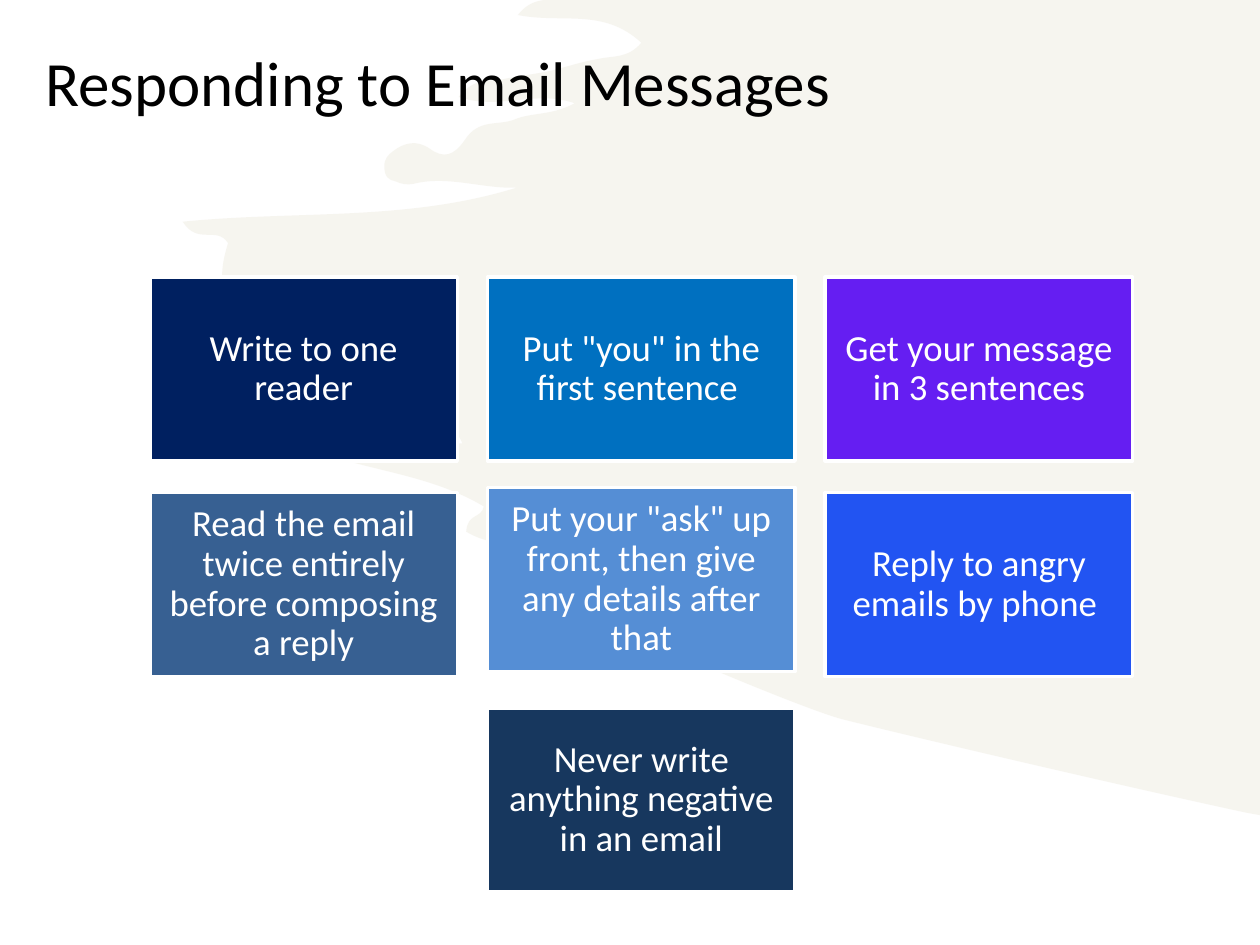
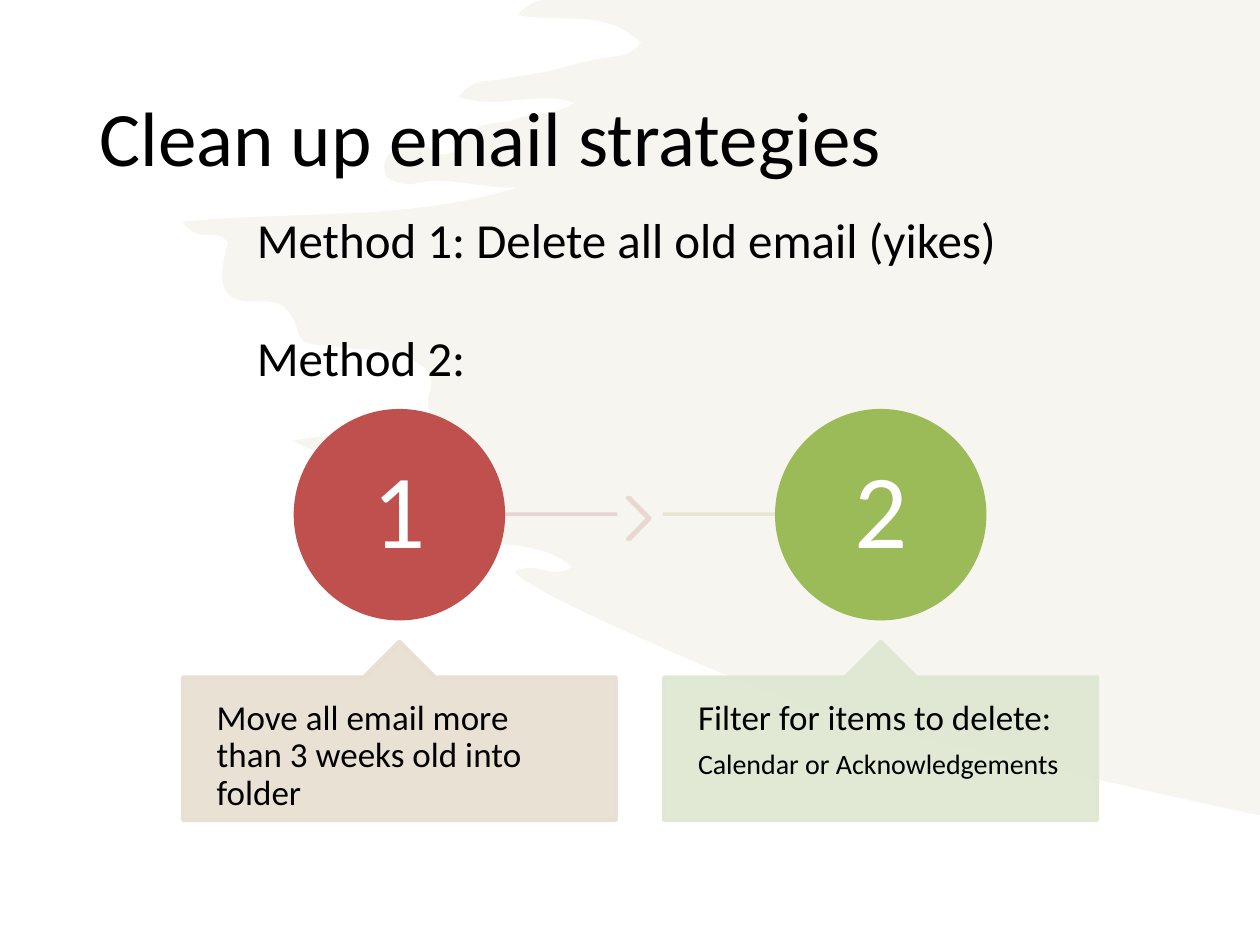
"""Build two slides on answering and cleaning up email."""
import dataclasses

import lxml.etree
import pptx
import pptx.dml.color
import pptx.enum.shapes
import pptx.enum.text
import pptx.oxml.ns
import pptx.util

Inches, Pt = pptx.util.Inches, pptx.util.Pt
RGB = pptx.dml.color.RGBColor.from_string
qn = pptx.oxml.ns.qn
SHAPE = pptx.enum.shapes.MSO_SHAPE
MIDDLE = pptx.enum.text.MSO_ANCHOR.MIDDLE
TOP = pptx.enum.text.MSO_ANCHOR.TOP
LEFT = pptx.enum.text.PP_ALIGN.LEFT
CENTER = pptx.enum.text.PP_ALIGN.CENTER


@dataclasses.dataclass(frozen=True)
class Theme:
    font: str = "Calibri"
    text: str = "000000"
    light: str = "FFFFFF"
    wash: str = "EEECE1"
    link: str = "E8D0D0"
    chevron: str = "E8D7D0"
    link_end: str = "E8E4D1"
    cards: tuple = ("002060", "0070C0", "651EF2", "376092", "558ED5", "2254F2", "17375E")
    circles: tuple = ("C0504D", "9BBB59")
    callouts: tuple = ("E8DED1", "DEE7D1")
    title_sizes: tuple = (36, 44)
    card_size: int = 21
    number_size: int = 60
    method_size: int = 28
    step_size: int = 20
    detail_size: int = 16
    line_width: int = 2


theme = Theme()


def paint(s, line, fill=None, alpha=100):
    """Colour a shape or connector, with opacity in percent."""
    if fill:
        s.shadow.inherit = False
        s.fill.solid()
        s.fill.fore_color.rgb = RGB(fill)
    else:
        lxml.etree.SubElement(s.element.spPr, qn("a:effectLst"))
    if line:
        s.line.color.rgb = RGB(line)
        s.line.width = Pt(theme.line_width)
    else:
        s.line.fill.background()
    if alpha < 100:
        for clr in s.element.spPr.iter(qn("a:srgbClr")):
            lxml.etree.SubElement(clr, qn("a:alpha"), val=str(alpha * 1000))


def write(s, paras, color, anchor=MIDDLE, align=LEFT, margins=(0.1, 0.05, 0.1, 0.05),
          spacing=0.9, gap=0):
    """Fill a text frame with (text, size) paragraphs."""
    tf = s.text_frame
    frame = dict(zip(("margin_left", "margin_top", "margin_right", "margin_bottom"),
                     map(Inches, margins)))
    for name, value in {**frame, "word_wrap": True, "vertical_anchor": anchor}.items():
        setattr(tf, name, value)
    for i, (text, size) in enumerate(paras):
        p = tf.add_paragraph() if i else tf.paragraphs[0]
        before = Pt(gap if i else 0)
        for name, value in {"alignment": align, "line_spacing": spacing,
                            "space_before": before}.items():
            setattr(p, name, value)
        r = p.add_run()
        r.text = text
        for name, value in {"name": theme.font, "size": Pt(size)}.items():
            setattr(r.font, name, value)
        r.font.color.rgb = RGB(color)


wash_curves = [
    (4.25, 0.01, 4.18, 0.03, 4.11, 0.12), (4.46, 0.19, 4.79, 0.06, 5.09, 0.34),
    (4.98, 0.47, 4.86, 0.44, 4.74, 0.47), (4.62, 0.49, 4.5, 0.53, 4.38, 0.56),
    (4.25, 0.59, 4.12, 0.6, 3.99, 0.63), (3.88, 0.65, 3.77, 0.61, 3.64, 0.77),
    (3.96, 0.88, 4.25, 0.71, 4.56, 0.82), (4.38, 0.92, 4.22, 0.89, 4.08, 0.95),
    (3.95, 1, 3.8, 0.94, 3.69, 1.11), (3.6, 1.24, 3.52, 1.26, 3.41, 1.18),
    (3.31, 1.11, 3.21, 1.13, 3.12, 1.2), (3.08, 1.23, 3.05, 1.26, 3.05, 1.32),
    (3.05, 1.41, 3.09, 1.43, 3.14, 1.44), (3.18, 1.46, 3.23, 1.47, 3.28, 1.46),
    (3.55, 1.39, 3.83, 1.5, 4.1, 1.49), (3.23, 1.76, 2.35, 1.67, 1.45, 1.76),
    (1.57, 1.95, 1.72, 1.79, 1.81, 1.93), (1.72, 2.22, 1.76, 2.37, 1.93, 2.39),
    (2.1, 2.41, 2.28, 2.31, 2.37, 2.65), (2.4, 2.76, 2.56, 2.73, 2.66, 2.75),
    (2.88, 2.79, 3.11, 2.75, 3.31, 2.88), (3.4, 2.93, 3.45, 2.97, 3.41, 3.11),
    (3.37, 3.25, 3.42, 3.3, 3.49, 3.36), (3.54, 3.4, 3.62, 3.39, 3.67, 3.52),
    (3.21, 3.5, 2.77, 3.4, 2.32, 3.5), (2.81, 3.74, 3.35, 3.73, 3.84, 4.02),
    (3.82, 4.12, 3.71, 4.07, 3.7, 4.22), (3.96, 4.38, 4.27, 4.27, 4.54, 4.5),
    (4.38, 4.61, 4.24, 4.44, 4.09, 4.54), (4.14, 4.69, 6.3, 5.61, 6.69, 5.71),
    (7.33, 5.87, 8.96, 6.25, 9.89, 6.45),
]
wash_points = [(4.32, 0)]
for curve in wash_curves:
    wash_points += zip(curve[::2], curve[1::2])
wash_points.append((10, 6.47))

prs = pptx.Presentation()
prs.slide_width, prs.slide_height = Inches(10), Inches(7.5)

titles = [
    ("Responding to Email Messages", (0.26, 0.27, 9.49, 0.83)),
    ("Clean up email strategies", (0.69, 0.4, 8.62, 1.45)),
]
for (title, box), size in zip(titles, theme.title_sizes):
    slide = prs.slides.add_slide(prs.slide_layouts[6])
    outline = slide.shapes.build_freeform(Inches(10), 0)
    outline.add_line_segments([(Inches(x), Inches(y)) for x, y in wash_points])
    s = outline.convert_to_shape()
    segments = list(s.element.spPr.iter(qn("a:lnTo")))[1:]
    for k in range(0, 3 * len(wash_curves), 3):
        first, *others = segments[k:k + 3]
        first.tag = qn("a:cubicBezTo")
        for segment in others:
            first.append(segment[0])
            segment.getparent().remove(segment)
    paint(s, None, theme.wash, 50)
    write(slide.shapes.add_textbox(*map(Inches, box)), [(title, size)], theme.text)
replies, cleanup = (slide.shapes for slide in prs.slides)

cards = [
    ("Write to one reader", 0, 2.2),
    ("Put \"you\" in the first sentence ", 1, 2.2),
    ("Get your message in 3 sentences", 2, 2.2),
    ("Read the email twice entirely before composing a reply", 0, 3.91),
    ("Put your \"ask\" up front, then give any details after that", 1, 3.87),
    ("Reply to angry emails by phone ", 2, 3.91),
    ("Never write anything negative in an email", 1, 5.62),
]
card_left, card_pitch = 1.19, 2.68
for (text, col, top), color in zip(cards, theme.cards):
    s = replies.add_shape(SHAPE.RECTANGLE, Inches(card_left + col * card_pitch), Inches(top),
                          Inches(2.44), Inches(1.46))
    paint(s, theme.light, color)
    write(s, [(text, theme.card_size)], theme.light, align=CENTER, margins=(0.09,) * 4)

link_y = Inches(4.08)
for start, end, color in [(3.36, 4.9, theme.link), (5.26, 6.99, theme.link_end)]:
    s = cleanup.add_connector(pptx.enum.shapes.MSO_CONNECTOR.STRAIGHT,
                              Inches(start), link_y, Inches(end), link_y)
    paint(s, color, alpha=90)

s = cleanup.add_shape(SHAPE.CHEVRON, Inches(4.98), Inches(3.95), Inches(0.18), Inches(0.33))
s.adjustments[0] = 0.9
paint(s, theme.chevron, theme.chevron, 90)

methods = [
    [("Move all email more than 3 weeks old into folder", theme.step_size)],
    [("Filter for items to delete:", theme.step_size),
     ("Calendar or Acknowledgements", theme.detail_size)],
]
callout_width, circle_size = 3.44, 1.65
for i, paras in enumerate(methods):
    left = 1.45 + i * 3.82
    circle_left = left + (callout_width - circle_size) / 2
    s = cleanup.add_shape(SHAPE.OVAL, Inches(circle_left), Inches(3.26),
                          Inches(circle_size), Inches(circle_size))
    paint(s, theme.circles[i], theme.circles[i])
    write(s, [(str(i + 1), theme.number_size)], theme.light, align=CENTER, margins=(0.06,) * 4)

    s = cleanup.add_shape(SHAPE.UP_ARROW_CALLOUT, Inches(left), Inches(5.09),
                          Inches(callout_width), Inches(1.42))
    for k, value in enumerate((0.5, 0.2, 0.2, 1)):
        s.adjustments[k] = value
    paint(s, theme.callouts[i], theme.callouts[i], 90)
    write(s, paras, theme.text, TOP, margins=(0.27, 0.18, 0.29, 0), gap=7)

s = cleanup.add_textbox(Inches(1.94), Inches(1.61), Inches(6.31), Inches(1.51))
write(s, [("Method 1: Delete all old email (yikes)", theme.method_size),
          ("Method 2:", theme.method_size)], theme.text, TOP, spacing=1.0, gap=34)

prs.save("out.pptx")
